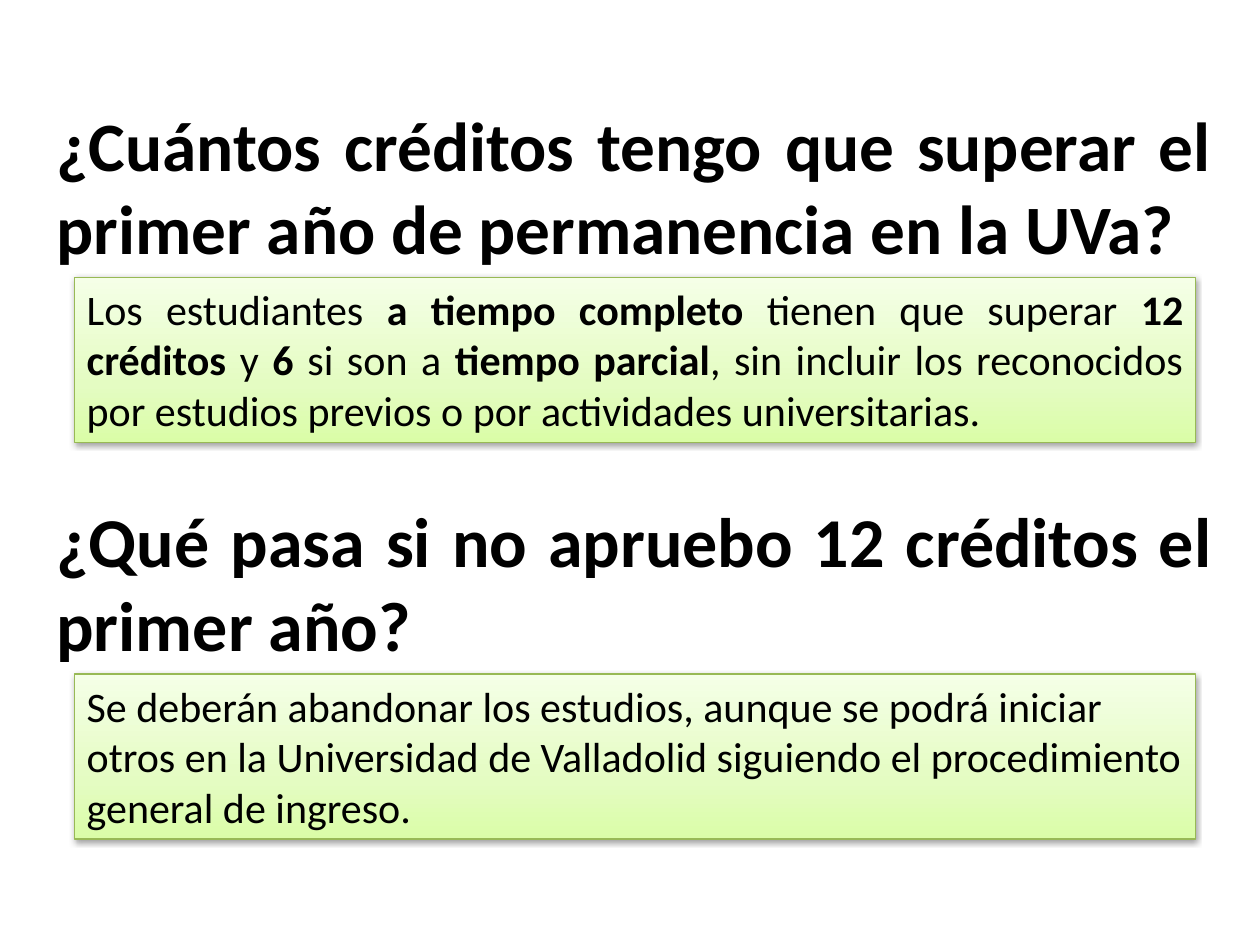
from copy import deepcopy

from lxml import etree
from pptx import Presentation
from pptx.dml.color import RGBColor
from pptx.enum.shapes import MSO_SHAPE
from pptx.enum.text import MSO_ANCHOR, MSO_AUTO_SIZE, PP_ALIGN
from pptx.oxml.ns import qn
from pptx.util import Pt

GREEN_STOPS = [(0, "DAFDA7"), (0.35, "E4FCC2"), (1, "F5FFE7")]


def rgb(hex_color):
    return RGBColor.from_string(hex_color)


def style_answer_box(box):
    """Give a box the green gradient, thin outline and soft shadow below."""
    box.fill.gradient()
    box.fill.gradient_angle = 90
    stop_list = box._element.spPr.find(".//" + qn("a:gsLst"))
    stop_list.insert(1, deepcopy(stop_list[0]))
    for stop, (position, color) in zip(box.fill.gradient_stops, GREEN_STOPS):
        stop.position = position
        stop.color.rgb = rgb(color)
    box.line.color.rgb = rgb("98B955")
    box.line.width = Pt(0.75)

    box.shadow.inherit = False
    effects = box._element.spPr.find(qn("a:effectLst"))
    shadow = etree.SubElement(effects, qn("a:outerShdw"), blurRad=str(Pt(3.1)),
                              dist=str(Pt(1.6)), dir="5400000", rotWithShape="0")
    black = etree.SubElement(shadow, qn("a:srgbClr"), val="000000")
    etree.SubElement(black, qn("a:alpha"), val="38000")


prs = Presentation()
prs.slide_width, prs.slide_height = Pt(720), Pt(540)
slide = prs.slides.add_slide(prs.slide_layouts[5])

# Questions
second_question = slide.shapes.add_textbox(Pt(25.2), Pt(293), Pt(674.6), Pt(78.5))
questions = [
    (slide.shapes.title, 54.7, 102.2, 39.6,
     "¿Cuántos créditos tengo que superar el primer año de permanencia en la UVa?"),
    (second_question, 293, 78.5, 40,
     "¿Qué pasa si no apruebo 12 créditos el primer año?"),
]
for question, top, height, size, wording in questions:
    question.left, question.top = Pt(25.2), Pt(top)
    question.width, question.height = Pt(674.6), Pt(height)
    frame = question.text_frame
    frame.word_wrap = True
    frame.auto_size = MSO_AUTO_SIZE.NONE
    frame.vertical_anchor = MSO_ANCHOR.MIDDLE
    frame.text = wording
    paragraph = frame.paragraphs[0]
    paragraph.alignment = PP_ALIGN.JUSTIFY
    paragraph.font.name = "Calibri"
    paragraph.font.size = Pt(size)
    paragraph.font.bold = True
    paragraph.font.color.rgb = rgb("000000")

# Answers: every second piece of wording is bold
answers = [
    (158.4, PP_ALIGN.JUSTIFY,
     ["Los estudiantes ", "a tiempo completo ", "tienen que superar ", "12 créditos ",
      "y ", "6 ", "si son a ", "tiempo parcial",
      ", sin incluir los reconocidos por estudios previos o por actividades universitarias."]),
    (385.2, PP_ALIGN.LEFT,
     ["Se deberán abandonar los estudios, aunque se podrá iniciar otros en la Universidad "
      "de Valladolid siguiendo el procedimiento general de ingreso."]),
]
for top, alignment, pieces in answers:
    answer = slide.shapes.add_shape(MSO_SHAPE.RECTANGLE, Pt(42.5), Pt(top), Pt(640.8), Pt(94.3))
    style_answer_box(answer)
    frame = answer.text_frame
    frame.word_wrap = True
    frame.auto_size = MSO_AUTO_SIZE.SHAPE_TO_FIT_TEXT
    frame.vertical_anchor = MSO_ANCHOR.TOP
    paragraph = frame.paragraphs[0]
    paragraph.alignment = alignment
    paragraph.font.name = "Calibri"
    paragraph.font.size = Pt(24)
    paragraph.font.color.rgb = rgb("000000")
    for index, piece in enumerate(pieces):
        run = paragraph.add_run()
        run.text = piece
        run.font.bold = index % 2 == 1

prs.save("out.pptx")
